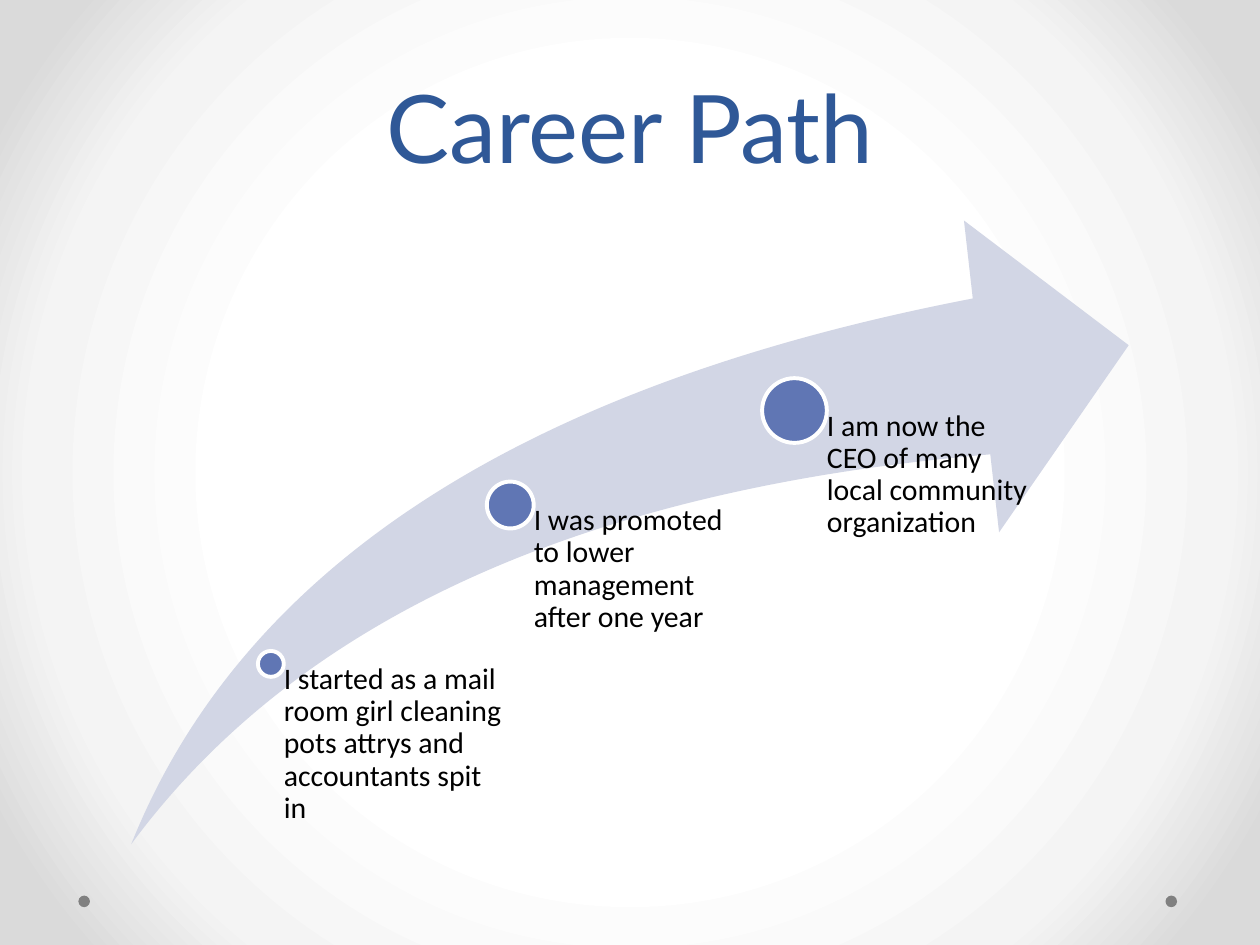
from lxml import etree
from pptx import Presentation
from pptx.dml.color import RGBColor
from pptx.enum.shapes import MSO_SHAPE
from pptx.enum.text import MSO_ANCHOR, PP_ALIGN
from pptx.oxml.ns import qn
from pptx.util import Pt

OVAL, SWOOSH = MSO_SHAPE.OVAL, MSO_SHAPE.SWOOSH_ARROW
TOP, BOTTOM = MSO_ANCHOR.TOP, MSO_ANCHOR.BOTTOM
LEFT, CENTER = PP_ALIGN.LEFT, PP_ALIGN.CENTER

THEME = {
    "title": {"name": "Lato", "size": Pt(54), "color": "2F5897"},
    "body": {"name": "Calibri", "size": Pt(17), "color": "000000"},
    "arrow": "D2D6E5",
    "ball": "6076B4",
    "outline": "FFFFFF",
    "dot": "808080",
    "background": [(50, "FFFFFF"), (76, "F4F4F4"), (92, "DADADA")],
}

deck = Presentation()
deck.slide_width, deck.slide_height = Pt(720), Pt(540)
slide = deck.slides.add_slide(deck.slide_layouts[6])


def add_figure(kind, left, top, width, height, color, outline=None):
    figure = slide.shapes.add_shape(kind, Pt(left), Pt(top), Pt(width), Pt(height))
    figure.shadow.inherit = False
    figure.fill.solid()
    figure.fill.fore_color.rgb = RGBColor.from_string(color)
    if outline:
        figure.line.color.rgb = RGBColor.from_string(outline)
        figure.line.width = Pt(2.25)
    else:
        figure.line.fill.background()
    return figure


def add_text(words, left, top, width, height, style, frame_format, para_format):
    box = slide.shapes.add_textbox(Pt(left), Pt(top), Pt(width), Pt(height))
    frame = box.text_frame
    frame.word_wrap = True
    for name, value in frame_format.items():
        setattr(frame, name, value)
    para = frame.paragraphs[0]
    for name, value in para_format.items():
        setattr(para, name, value)
    span = para.add_run()
    span.text = words
    for name in ("name", "size"):
        setattr(span.font, name, THEME[style][name])
    span.font.color.rgb = RGBColor.from_string(THEME[style]["color"])


slide.background.fill.gradient()
gradient = slide.background._cSld.find(".//" + qn("a:gradFill"))
for child in list(gradient):
    gradient.remove(child)
stops = etree.SubElement(gradient, qn("a:gsLst"))
for percent, color in THEME["background"]:
    stop = etree.SubElement(stops, qn("a:gs"), pos=str(percent * 1000))
    etree.SubElement(stop, qn("a:srgbClr"), val=color)
circle = etree.SubElement(gradient, qn("a:path"), path="circle")
etree.SubElement(circle, qn("a:fillToRect"), dict.fromkeys("ltrb", "50000"))

for left in (666, 44.8):
    add_figure(OVAL, left, 511.8, 6.6, 6.6, THEME["dot"])

add_text("Career Path", 36, 12, 648, 96, "title",
         {"vertical_anchor": BOTTOM},
         {"alignment": CENTER, "line_spacing": Pt(58)})

arrow_left, arrow_top, arrow_width, arrow_height = 75, 126, 570, 356.4
arrow = add_figure(SWOOSH, arrow_left, arrow_top, arrow_width, arrow_height, THEME["arrow"])
arrow.adjustments[0] = arrow.adjustments[1] = 0.25
arrow_bottom = arrow_top + arrow_height

steps = [
    (154.8, 379.4, 14.8, 133, "I started as a mail room girl cleaning pots attrys and accountants spit in"),
    (291.6, 288.6, 26.8, 137, "I was promoted to lower management after one year"),
    (454, 234.6, 37, 137, "I am now the CEO of many local community organization"),
]
for center_x, center_y, diameter, width, words in steps:
    radius = diameter / 2
    add_figure(OVAL, center_x - radius, center_y - radius, diameter, diameter,
               THEME["ball"], THEME["outline"])
    add_text(words, center_x, center_y, width, arrow_bottom - center_y, "body",
             {"vertical_anchor": TOP, "margin_left": Pt(radius),
              "margin_top": 0, "margin_right": 0, "margin_bottom": 0},
             {"alignment": LEFT, "line_spacing": 0.9})

deck.save("out.pptx")
